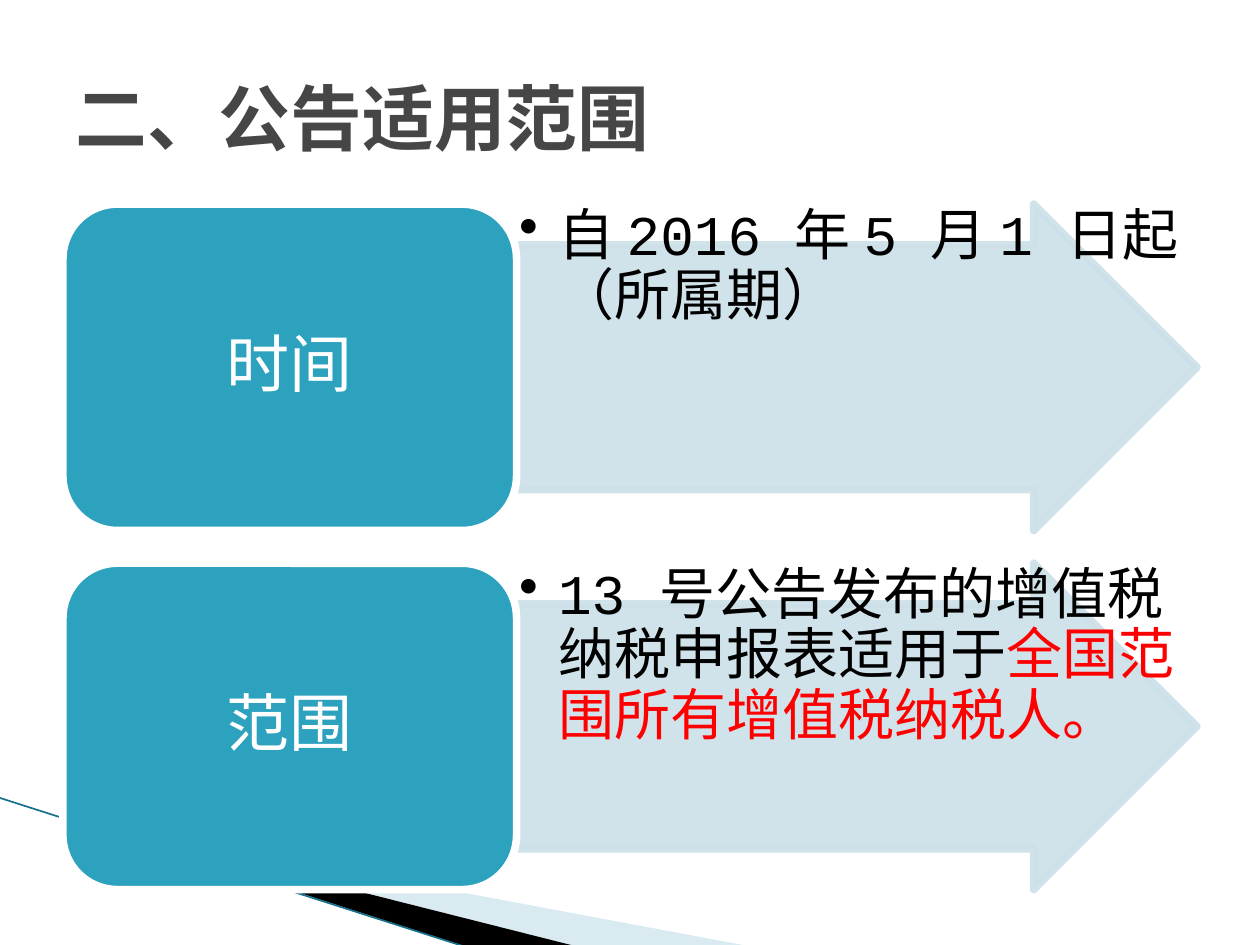
import pptx
import pptx.dml.color
import pptx.enum.lang
import pptx.enum.shapes
import pptx.enum.text
import pptx.oxml.ns
import pptx.util
from lxml import etree

Inches = pptx.util.Inches
Pt = pptx.util.Pt
MIDDLE = pptx.enum.text.MSO_ANCHOR.MIDDLE
SHAPES = pptx.enum.shapes.MSO_SHAPE
qn = pptx.oxml.ns.qn

THEME = {
    "font": "Courier New",
    "title": "464646", "teal": "2DA2BF", "arrow": "CDE0E8", "black": "000000",
    "white": "FFFFFF", "red": "FF0000", "wedge": "A0CBDC", "edge": "17708A",
    "title_size": 41, "label_size": 36, "detail_size": 32, "outline": 4.33,
}


def paint(fill, color, opacity=100):
    fill.solid()
    fill.fore_color.rgb = pptx.dml.color.RGBColor.from_string(THEME[color])
    if opacity < 100:
        tint = fill._xPr.find(qn("a:solidFill"))[0]
        etree.SubElement(tint, qn("a:alpha"), val=str(opacity * 1000))


def style_run(run, size, color, bold=False):
    run.font.name = THEME["font"]
    run.font.size = Pt(THEME[size])
    run.font.bold = bold
    run.font.language_id = pptx.enum.lang.MSO_LANGUAGE_ID.SIMPLIFIED_CHINESE
    paint(run.font.fill, color)


deck = pptx.Presentation()
deck.slide_width, deck.slide_height = Inches(10), Inches(7.5)
slide = deck.slides.add_slide(deck.slide_layouts[6])
shapes = slide.shapes

wedges = [
    ([(0.55, 6.5), (5.95, 7.51), (4.56, 7.51)], "wedge", 40),
    ([(0.53, 6.49), (4.57, 7.51), (3.72, 7.52)], "black", 100),
]
for corners, color, opacity in wedges:
    points = [(Inches(x), Inches(y)) for x, y in corners]
    outline = shapes.build_freeform(*points[0])
    outline.add_line_segments(points[1:], close=True)
    wedge = outline.convert_to_shape()
    wedge.shadow.inherit = False
    wedge.line.fill.background()
    paint(wedge.fill, color, opacity)

edge = shapes.add_connector(
    pptx.enum.shapes.MSO_CONNECTOR.STRAIGHT,
    Inches(-0.01), Inches(6.33), Inches(3.71), Inches(7.52))
edge.line.width = Pt(0.95)
paint(edge.line.fill, "edge")
etree.SubElement(edge._element.spPr, qn("a:effectLst"))

sections = [
    ("时间", [("自 2016 年 5 月 1 日起（所属期）", "black")]),
    ("范围", [("13 号公告发布的增值税纳税申报表适用于", "black"),
            ("全国范围所有增值税纳税人。", "red")]),
]
for row, (label, detail) in enumerate(sections):
    top, height = Inches(1.62 + 2.85 * row), Inches(2.59)
    detail_area = Inches(4.1), top, Inches(5.4), height

    arrow = shapes.add_shape(SHAPES.RIGHT_ARROW, *detail_area)
    arrow.adjustments[0] = 0.75
    arrow.adjustments[1] = 0.5
    arrow.shadow.inherit = False
    paint(arrow.fill, "arrow", 90)
    arrow.line.width = Pt(THEME["outline"])
    paint(arrow.line.fill, "arrow", 90)
    etree.SubElement(arrow.line._ln, qn("a:round"))

    detail_frame = shapes.add_textbox(*detail_area).text_frame
    detail_frame.word_wrap = True
    detail_frame.margin_left = detail_frame.margin_right = Inches(0.02)
    detail_frame.margin_top = detail_frame.margin_bottom = Inches(0.02)
    bullet = detail_frame.paragraphs[0]
    bullet.line_spacing = 0.9
    bullet_format = bullet._p.get_or_add_pPr()
    bullet_format.set("marL", str(Inches(0.31)))
    bullet_format.set("indent", str(Inches(-0.31)))
    etree.SubElement(bullet_format, qn("a:buChar"), char="•")
    for words, color in detail:
        run = bullet.add_run()
        run.text = words
        style_run(run, "detail_size", color)

    card = shapes.add_shape(
        SHAPES.ROUNDED_RECTANGLE, Inches(0.5), top, Inches(3.6), height)
    card.shadow.inherit = False
    paint(card.fill, "teal")
    card.line.width = Pt(THEME["outline"])
    paint(card.line.fill, "white")
    card.text_frame.text = label
    card.text_frame.vertical_anchor = MIDDLE
    caption = card.text_frame.paragraphs[0]
    caption.alignment = pptx.enum.text.PP_ALIGN.CENTER
    caption.line_spacing = 0.9
    style_run(caption.runs[0], "label_size", "white")

title_frame = shapes.add_textbox(
    Inches(0.5), Inches(0.3), Inches(9), Inches(1.25)).text_frame
title_frame.word_wrap = True
title_frame.vertical_anchor = MIDDLE
title_frame.text = "二、公告适用范围"
style_run(title_frame.paragraphs[0].runs[0], "title_size", "title", bold=True)

deck.save("out.pptx")
